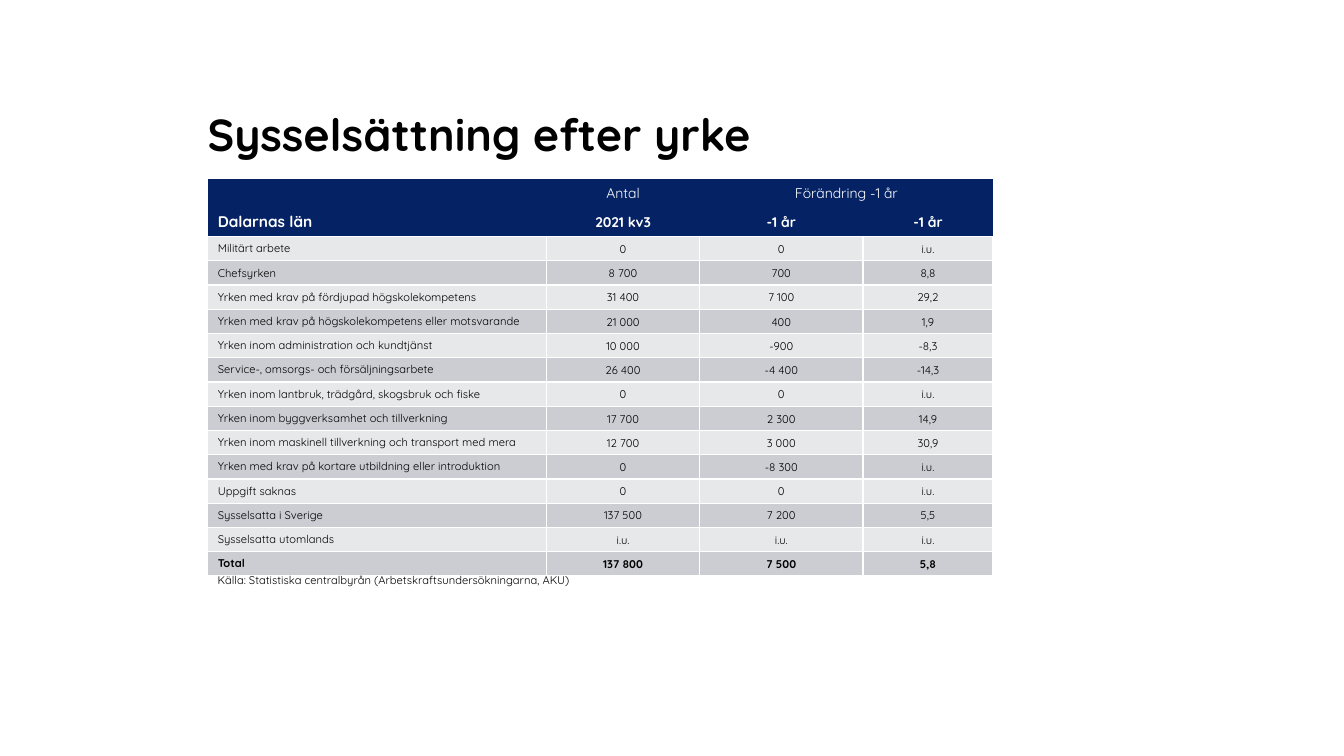
from lxml.etree import SubElement
from pptx import Presentation
from pptx.dml.color import RGBColor
from pptx.enum.text import MSO_ANCHOR, PP_ALIGN
from pptx.oxml.ns import qn
from pptx.util import Inches, Pt

NAVY = RGBColor(0x05, 0x23, 0x64)
LIGHT_GREY = RGBColor(0xE7, 0xE8, 0xEA)
MID_GREY = RGBColor(0xCC, 0xCD, 0xD3)
BLACK = RGBColor(0, 0, 0)
WHITE = RGBColor(0xFF, 0xFF, 0xFF)
FONT = "Quicksand"

LEFT = 2.06
COLUMN_WIDTHS = [3.36, 1.52, 1.62, 1.29]
HEADER_HEIGHTS = [0.27, 0.29]
ROW_HEIGHT = 0.24

ROWS = [
    ("", "Antal", "Förändring -1 år", ""),
    ("Dalarnas län", "2021 kv3", "-1 år", "-1 år"),
    ("Militärt arbete", "0", "0", "i.u."),
    ("Chefsyrken", "8 700", "700", "8,8"),
    ("Yrken med krav på fördjupad högskolekompetens", "31 400", "7 100", "29,2"),
    ("Yrken med krav på högskolekompetens eller motsvarande", "21 000", "400", "1,9"),
    ("Yrken inom administration och kundtjänst", "10 000", "-900", "-8,3"),
    ("Service-, omsorgs- och försäljningsarbete", "26 400", "-4 400", "-14,3"),
    ("Yrken inom lantbruk, trädgård, skogsbruk och fiske", "0", "0", "i.u."),
    ("Yrken inom byggverksamhet och tillverkning", "17 700", "2 300", "14,9"),
    ("Yrken inom maskinell tillverkning och transport med mera", "12 700", "3 000", "30,9"),
    ("Yrken med krav på kortare utbildning eller introduktion", "0", "-8 300", "i.u."),
    ("Uppgift saknas", "0", "0", "i.u."),
    ("Sysselsatta i Sverige", "137 500", "7 200", "5,5"),
    ("Sysselsatta utomlands", "i.u.", "i.u.", "i.u."),
    ("Total", "137 800", "7 500", "5,8"),
]


def write_text(frame, text, size=8, color=BLACK, bold=False, align=PP_ALIGN.LEFT):
    para = frame.paragraphs[0]
    para.alignment = align
    para.font.size = Pt(size)
    if not text:
        return
    span = para.add_run()
    span.text = text
    span.font.name = FONT
    span.font.size = Pt(size)
    span.font.bold = bold
    span.font.color.rgb = color


def set_borders(cell, color=None):
    """Give all four sides a 1 pt line, or no line without a color."""
    properties = cell._tc.get_or_add_tcPr()
    for position, side in enumerate(("lnL", "lnR", "lnT", "lnB")):
        line = SubElement(properties, qn(f"a:{side}"), w=str(Pt(1)))
        properties.insert(position, line)
        if color is None:
            SubElement(line, qn("a:noFill"))
        else:
            fill = SubElement(line, qn("a:solidFill"))
            SubElement(fill, qn("a:srgbClr"), val=str(color))


class EmploymentSlide:
    def __init__(self, deck):
        self.page = deck.slides.add_slide(deck.slide_layouts[5])

    def add_title(self, text):
        title = self.page.shapes.title
        title.left, title.top = Inches(LEFT), Inches(0.37)
        title.width, title.height = Inches(9.22), Inches(1.22)
        frame = title.text_frame
        frame.margin_left = frame.margin_right = 0
        frame.margin_top = frame.margin_bottom = 0
        frame.vertical_anchor = MSO_ANCHOR.BOTTOM
        write_text(frame, text, size=32, bold=True)

    def add_table(self, rows):
        heights = HEADER_HEIGHTS + [ROW_HEIGHT] * (len(rows) - len(HEADER_HEIGHTS))
        table = self.page.shapes.add_table(
            len(rows), len(COLUMN_WIDTHS), Inches(LEFT), Inches(1.78),
            Inches(sum(COLUMN_WIDTHS)), Inches(sum(heights))).table
        for column, width in zip(table.columns, COLUMN_WIDTHS):
            column.width = Inches(width)
        for row, height in zip(table.rows, heights):
            row.height = Inches(height)
        for row_index, values in enumerate(rows):
            for column_index, text in enumerate(values):
                self.format_cell(table.cell(row_index, column_index), text,
                                 row_index, column_index, len(rows) - 1)
        table.cell(0, 2).merge(table.cell(0, 3))

    def format_cell(self, cell, text, row, column, last_row):
        is_header = row < len(HEADER_HEIGHTS)
        is_label = column == 0
        cell.fill.solid()
        cell.fill.fore_color.rgb = NAVY if is_header else (LIGHT_GREY, MID_GREY)[row % 2]
        set_borders(cell, None if is_header else WHITE)
        if row > 0 and not is_label:
            cell.vertical_anchor = MSO_ANCHOR.MIDDLE
            cell.margin_left = cell.margin_right = cell.margin_top = Inches(0.01)
            cell.margin_bottom = 0
        header_size = 11 if is_label and row == 1 else 10
        write_text(cell.text_frame, text,
                   size=header_size if is_header else 8,
                   color=WHITE if is_header else BLACK,
                   bold=row in (1, last_row),
                   align=PP_ALIGN.LEFT if is_label else PP_ALIGN.CENTER)

    def add_source(self, text):
        box = self.page.shapes.add_textbox(
            Inches(LEFT), Inches(5.64), Inches(3.8), Inches(0.24))
        box.text_frame.word_wrap = False
        write_text(box.text_frame, text)


def main():
    deck = Presentation()
    deck.slide_width, deck.slide_height = Inches(13.33), Inches(7.5)
    slide = EmploymentSlide(deck)
    slide.add_title("Sysselsättning efter yrke")
    slide.add_table(ROWS)
    slide.add_source("Källa: Statistiska centralbyrån (Arbetskraftsundersökningarna, AKU)")
    deck.save("out.pptx")


if __name__ == "__main__":
    main()
